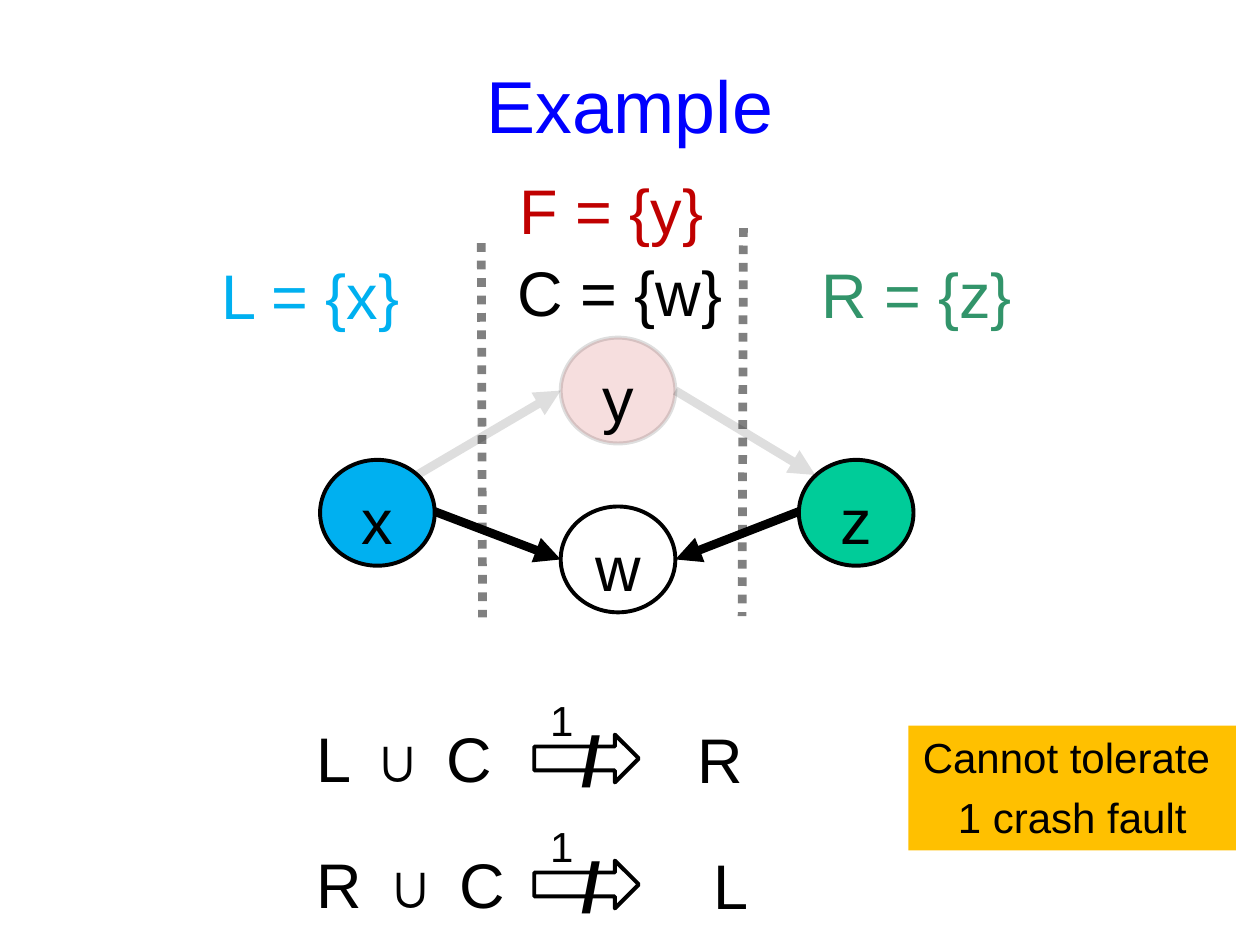
from lxml.etree import SubElement
from pptx import Presentation
from pptx.dml.color import RGBColor
from pptx.enum.dml import MSO_LINE
from pptx.enum.shapes import MSO_CONNECTOR, MSO_SHAPE
from pptx.enum.text import MSO_ANCHOR, MSO_AUTO_SIZE, PP_ALIGN
from pptx.oxml.ns import qn
from pptx.util import Inches, Pt

BLACK = RGBColor(0x00, 0x00, 0x00)
WHITE = RGBColor(0xFF, 0xFF, 0xFF)
GRAY = RGBColor(0x80, 0x80, 0x80)
BLUE = RGBColor(0x00, 0x00, 0xFF)
SKY = RGBColor(0x00, 0xB0, 0xF0)
GREEN = RGBColor(0x32, 0x94, 0x6A)
TEAL = RGBColor(0x00, 0xCC, 0x99)
RED = RGBColor(0xC0, 0x00, 0x00)
AMBER = RGBColor(0xFF, 0xC0, 0x00)

NODE_WIDTH, NODE_HEIGHT = 0.91, 0.84
FADED = 13


class SlideBuilder:
    """Draws styled elements on the current slide."""

    font_name = "Arial"

    def __init__(self, presentation):
        self.slide = presentation.slides.add_slide(presentation.slide_layouts[1])

    def style(self, paragraph, size, color=BLACK, bold=False, before=3):
        paragraph.alignment = PP_ALIGN.CENTER
        paragraph.space_before = Pt(before)
        font = paragraph.font
        font.name, font.size, font.bold = self.font_name, Pt(size), bold
        font.color.rgb = color

    def place(self, shape, left, top, width, height):
        shape.left, shape.top = Inches(left), Inches(top)
        shape.width, shape.height = Inches(width), Inches(height)

    def fade(self, shape, opacity):
        for color in list(shape._element.spPr.iter(qn("a:srgbClr"))):
            SubElement(color, qn("a:alpha"), val=str(opacity * 1000))

    def title(self, text):
        shape = self.slide.shapes.title
        self.place(shape, 0.75, 0.2, 8.5, 1.25)
        frame = shape.text_frame
        frame.text = text
        frame.vertical_anchor = MSO_ANCHOR.MIDDLE
        self.style(frame.paragraphs[0], 42, BLUE, before=0)

    def unions(self, pairs):
        shape = self.slide.placeholders[1]
        self.place(shape, 0.75, 1.86, 8.5, 4.81)
        frame = shape.text_frame
        frame.auto_size = MSO_AUTO_SIZE.NONE
        frame.vertical_anchor = MSO_ANCHOR.TOP
        frame.margin_left, frame.margin_top = Inches(1.76), Inches(3.45)
        for index, (first, second) in enumerate(pairs):
            paragraph = frame.add_paragraph() if index else frame.paragraphs[0]
            paragraph.line_spacing = Pt(72)
            properties = paragraph._p.get_or_add_pPr()
            properties.set("marL", "0")
            properties.set("indent", "0")
            SubElement(properties, qn("a:buNone"))
            self.style(paragraph, 36, before=0)
            paragraph.alignment = PP_ALIGN.LEFT
            for text, name in ((f"{first} ", self.font_name),
                               ("∪", "Times New Roman"),
                               (f" {second}", self.font_name)):
                run = paragraph.add_run()
                run.text = text
                run.font.name = name

    def label(self, text, left, top, width, height, size=36, color=BLACK,
              bold=False, wrap=False):
        shape = self.slide.shapes.add_textbox(
            Inches(left), Inches(top), Inches(width), Inches(height))
        frame = shape.text_frame
        frame.word_wrap = wrap
        frame.text = text
        self.style(frame.paragraphs[0], size, color, bold)

    def shape(self, kind, left, top, width, height, fill=None, outline=True):
        shape = self.slide.shapes.add_shape(
            kind, Inches(left), Inches(top), Inches(width), Inches(height))
        shape.shadow.inherit = False
        if fill is None:
            shape.fill.background()
        else:
            shape.fill.solid()
            shape.fill.fore_color.rgb = fill
        if outline:
            shape.line.color.rgb = BLACK
            shape.line.width = Pt(2.25)
        else:
            shape.line.fill.background()
        return shape

    def node(self, name, left, top, fill=None, opacity=None):
        shape = self.shape(MSO_SHAPE.OVAL, left, top, NODE_WIDTH, NODE_HEIGHT, fill)
        if opacity:
            self.fade(shape, opacity)
        frame = shape.text_frame
        frame.word_wrap = True
        frame.vertical_anchor = MSO_ANCHOR.TOP
        frame.text = name
        self.style(frame.paragraphs[0], 36)

    def line(self, start, end, color=BLACK):
        connector = self.slide.shapes.add_connector(
            MSO_CONNECTOR.STRAIGHT, *map(Inches, start + end))
        connector.line.color.rgb = color
        connector.line.width = Pt(5)
        SubElement(connector._element.spPr, qn("a:effectLst"))
        return connector

    def divider(self, start, end):
        self.line(start, end, GRAY).line.dash_style = MSO_LINE.ROUND_DOT

    def arrow(self, start, end, opacity=None):
        connector = self.line(start, end)
        SubElement(connector.line._get_or_add_ln(), qn("a:tailEnd"), type="triangle")
        if opacity:
            self.fade(connector, opacity)

    def blocked_arrow(self, top):
        self.label("1", 4.13, top, 0.66, 0.5, size=24, wrap=True)
        self.shape(MSO_SHAPE.RIGHT_ARROW, 4.24, top + 0.37, 0.83, 0.38, WHITE)
        self.label("/", 4.51, top + 0.18, 0.36, 0.77, size=40, bold=True)

    def callout(self, lines, left, top, width, height):
        shape = self.shape(MSO_SHAPE.RECTANGLE, left, top, width, height, AMBER, False)
        frame = shape.text_frame
        frame.word_wrap = False
        frame.vertical_anchor = MSO_ANCHOR.TOP
        frame.text = "\n".join(lines)
        for index, paragraph in enumerate(frame.paragraphs):
            self.style(paragraph, 24, before=5 if index else 3)


def main():
    presentation = Presentation()
    presentation.slide_width, presentation.slide_height = Inches(10), Inches(7.5)
    builder = SlideBuilder(presentation)
    builder.title("Example")
    builder.unions([("L", "C"), ("R", "C")])

    builder.divider((3.82, 1.93), (3.83, 4.9))
    builder.divider((5.9, 1.81), (5.89, 4.89))
    for text, left, top, width, color in (
        ("L = {x}", 1.65, 1.99, 1.63, SKY),
        ("R = {z}", 6.41, 1.98, 1.73, GREEN),
        ("F = {y}", 3.99, 1.31, 1.73, RED),
        ("C = {w}", 4.0, 1.96, 1.84, BLACK),
    ):
        builder.label(text, left, top, width, 0.71, color=color)

    for top, target, left, width in ((5.46, "R", 5.44, 0.56), (6.46, "L", 5.56, 0.48)):
        builder.blocked_arrow(top)
        builder.label(target, left, top + 0.21, width, 0.71)

    builder.node("x", 2.54, 3.65, SKY)
    builder.node("y", 4.45, 2.68, RED, FADED)
    builder.node("z", 6.34, 3.65, TEAL)
    builder.node("w", 4.45, 4.02)
    builder.arrow((3.31, 3.77), (4.45, 3.1), FADED)
    builder.arrow((5.36, 3.1), (6.47, 3.77), FADED)
    builder.arrow((3.45, 4.06), (4.45, 4.44))
    builder.arrow((6.34, 4.06), (5.36, 4.44))

    builder.callout(["Cannot tolerate ", "1 crash fault"], 7.21, 5.76, 2.6, 0.99)
    presentation.save("out.pptx")


if __name__ == "__main__":
    main()
